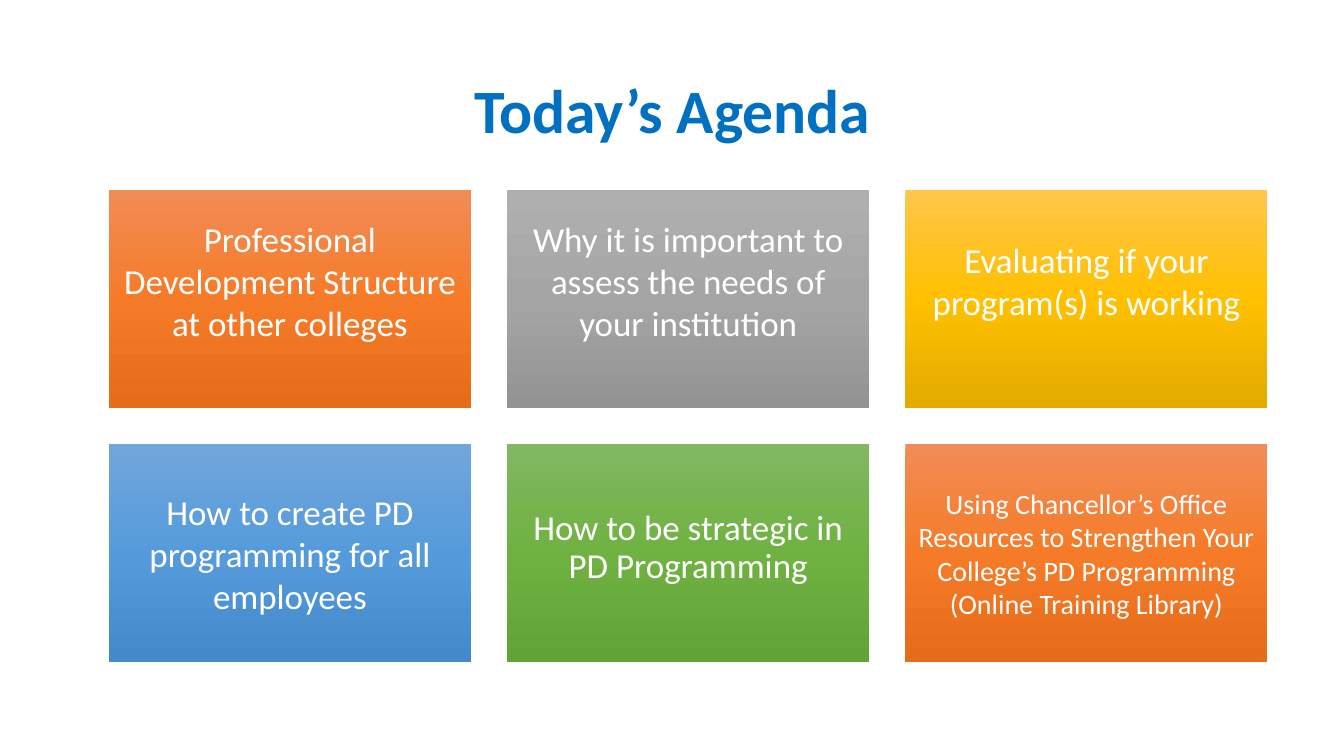
from copy import deepcopy

from pptx import Presentation
from pptx.dml.color import RGBColor
from pptx.enum.shapes import MSO_SHAPE
from pptx.enum.text import MSO_ANCHOR, PP_ALIGN
from pptx.util import Inches, Pt

RECTANGLE = MSO_SHAPE.RECTANGLE
MIDDLE = MSO_ANCHOR.MIDDLE
CENTER = PP_ALIGN.CENTER

FONT = "Calibri"
BLANK_LAYOUT = 6
COLUMNS = 3
CARD_WIDTH, CARD_HEIGHT, GAP = 3.59, 2.16, 0.36

ORANGE = ("F18C57", "F67B28", "E56C19")
GRAY = ("AFAFAF", "A5A5A5", "939393")
GOLD = ("FFC64B", "FFC000", "E3AB00")
BLUE = ("71A6DB", "559BDB", "448ACA")
GREEN = ("81B861", "6FB242", "62A336")

# Text, gradient, font size, line spacing, inset, extra bottom inset
CARDS = [
    ("Professional Development Structure at other colleges", ORANGE, 25, 1.0, 0.1, 0.38),
    ("Why it is important to assess the needs of your institution", GRAY, 25, 1.0, 0.1, 0.38),
    ("Evaluating if your program(s) is working", GOLD, 25, 1.0, 0.1, 0.38),
    ("How to create PD programming for all employees", BLUE, 25, 1.0, 0.1, 0),
    ("How to be strategic in PD Programming", GREEN, 25, 0.9, 0.1, 0.1),
    ("Using Chancellor’s Office Resources to Strengthen Your College’s PD Programming "
     "(Online Training Library)", ORANGE, 20, 1.0, 0.08, 0),
]


def color(value):
    return RGBColor.from_string(value)


def write_text(shape, text, size, font_color, line_spacing, bold=False):
    frame = shape.text_frame
    frame.word_wrap = True
    frame.vertical_anchor = MIDDLE
    frame.text = text
    paragraph = frame.paragraphs[0]
    paragraph.alignment = CENTER
    paragraph.line_spacing = line_spacing
    font = paragraph.runs[0].font
    font.name = FONT
    font.size = Pt(size)
    font.bold = bold
    font.color.rgb = color(font_color)


def fill_gradient(shape, colors):
    """Fill from top to bottom with three evenly spaced colours."""
    fill = shape.fill
    fill.gradient()
    fill.gradient_angle = 270
    # The default gradient has two stops, so add a third
    stop_list = shape._element.spPr.gradFill.gsLst
    stop_list.append(deepcopy(stop_list[0]))
    for index, (stop, value) in enumerate(zip(fill.gradient_stops, colors)):
        stop.position = index / 2
        stop.color.rgb = color(value)


def add_title(slide, left, top, width, height):
    title = slide.shapes.add_textbox(Inches(left), Inches(top), Inches(width), Inches(height))
    write_text(title, "Today’s Agenda", 44, "0070C0", 0.9, bold=True)


def add_card(slide, left, top, text, colors, size, line_spacing, inset, extra_bottom):
    card = slide.shapes.add_shape(
        RECTANGLE, Inches(left), Inches(top), Inches(CARD_WIDTH), Inches(CARD_HEIGHT))
    card.shadow.inherit = False
    card.line.fill.background()
    fill_gradient(card, colors)
    write_text(card, text, size, "FFFFFF", line_spacing)
    frame = card.text_frame
    frame.margin_left = frame.margin_right = frame.margin_top = Inches(inset)
    frame.margin_bottom = Inches(inset + extra_bottom)


def add_agenda(slide, left, top):
    for index, card in enumerate(CARDS):
        row, column = divmod(index, COLUMNS)
        add_card(slide, left + column * (CARD_WIDTH + GAP),
                 top + row * (CARD_HEIGHT + GAP), *card)


def main():
    presentation = Presentation()
    presentation.slide_width = Inches(13.33)
    presentation.slide_height = Inches(7.5)
    slide = presentation.slides.add_slide(presentation.slide_layouts[BLANK_LAYOUT])
    add_title(slide, 0.92, 0.4, 11.5, 1.45)
    add_agenda(slide, 1.08, 1.89)
    presentation.save("out.pptx")


if __name__ == "__main__":
    main()
